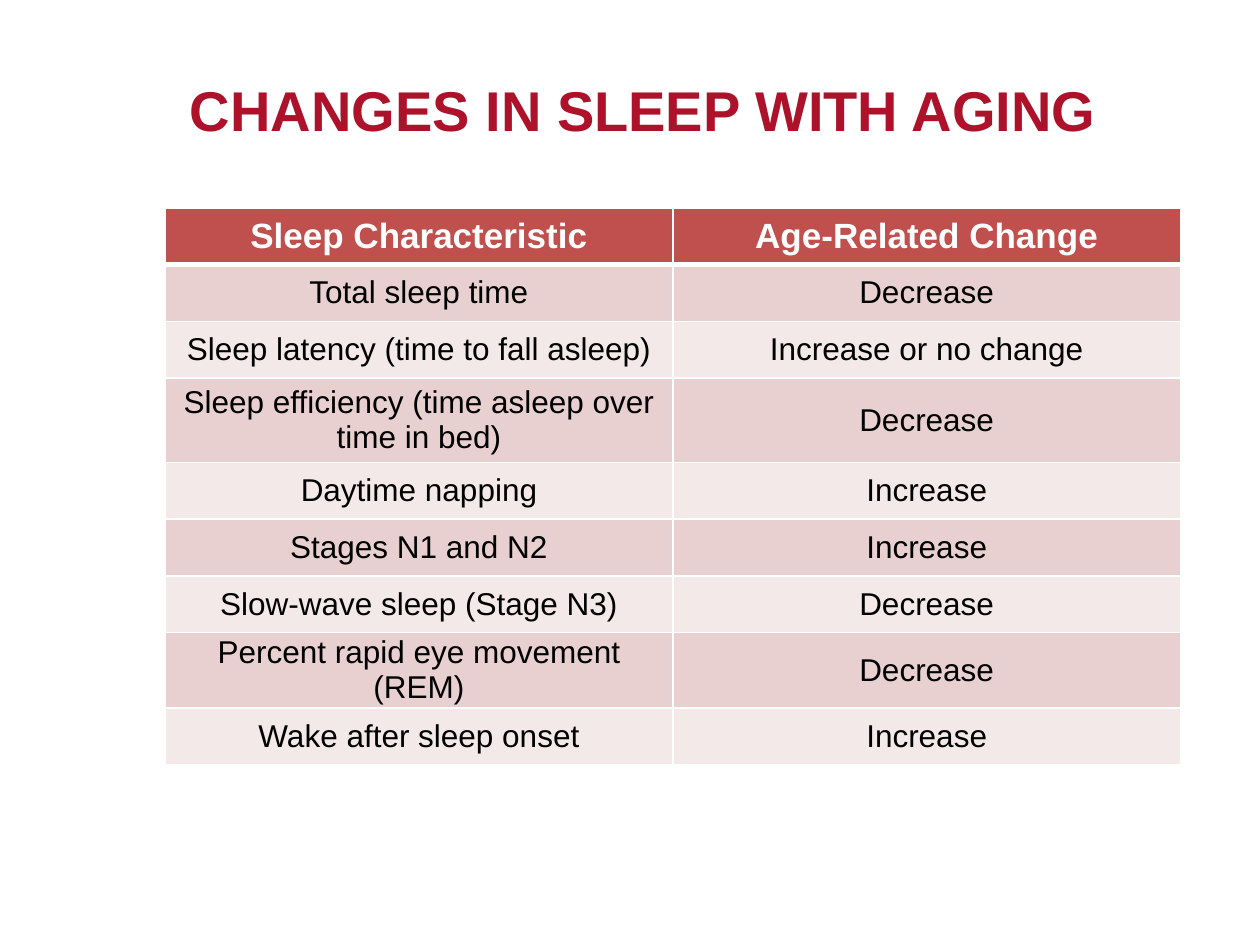
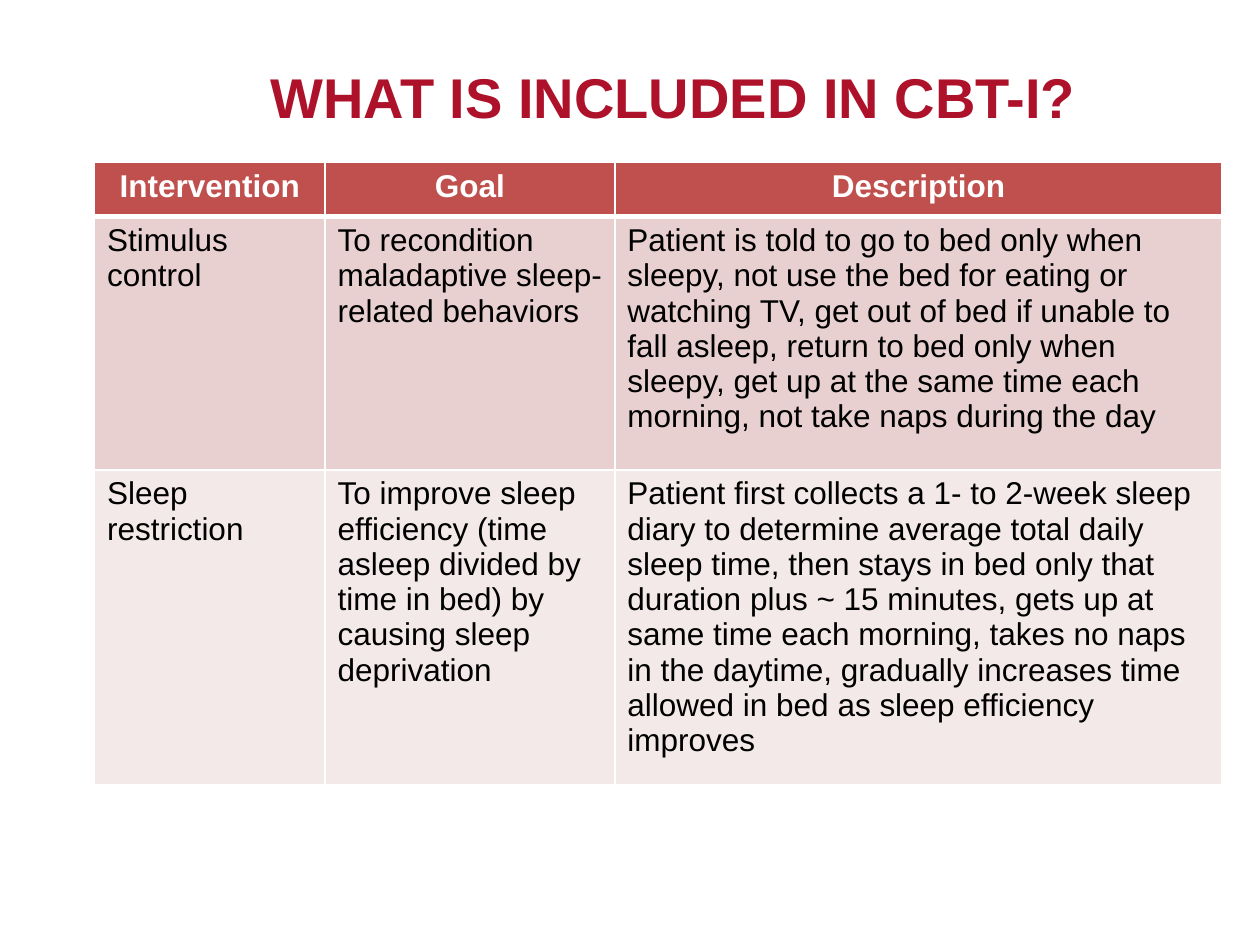
"""Build two slides on sleep, each a title above a banded table."""
from dataclasses import dataclass

from pptx import Presentation
from pptx.dml.color import RGBColor
from pptx.enum.text import MSO_ANCHOR, PP_ALIGN
from pptx.oxml.ns import qn
from pptx.util import Pt
from lxml.etree import SubElement

PX = 9144
FONT = "Arial"
COLORS = {
    "title": "AD122A",
    "head": "C0504D",
    "dark": "E8D0D0",
    "light": "F4E9E9",
    "white": "FFFFFF",
    "black": "000000",
}


@dataclass(frozen=True)
class Box:
    left: int
    top: int
    width: int
    height: int


@dataclass(frozen=True)
class Grid:
    left: int
    top: int
    cols: list[int]
    rows: list[int]
    cells: list[list[str]]
    pad: tuple[int, int]
    head_size: int
    align: PP_ALIGN
    anchor: MSO_ANCHOR


@dataclass(frozen=True)
class Page:
    title: str
    box: Box
    grid: Grid


PAGES = [
    Page(
        "CHANGES IN SLEEP WITH AGING",
        Box(141, 47, 744, 67),
        Grid(
            left=131, top=165,
            cols=[403] * 2,
            rows=[45] * 3 + [67] + [45] * 5,
            cells=[
                ["Sleep Characteristic", "Age-Related Change"],
                ["Total sleep time", "Decrease"],
                ["Sleep latency (time to fall asleep)", "Increase or no change"],
                ["Sleep efficiency (time asleep over time in bed)", "Decrease"],
                ["Daytime napping", "Increase"],
                ["Stages N1 and N2", "Increase"],
                ["Slow-wave sleep (Stage N3)", "Decrease"],
                ["Percent rapid eye movement (REM)", "Decrease"],
                ["Wake after sleep onset", "Increase"],
            ],
            pad=(7, 0), head_size=20,
            align=PP_ALIGN.CENTER, anchor=MSO_ANCHOR.MIDDLE,
        ),
    ),
    Page(
        "WHAT IS INCLUDED IN CBT-I?",
        Box(205, 42, 667, 62),
        Grid(
            left=75, top=129,
            cols=[183, 230, 482],
            rows=[43, 201, 243],
            cells=[
                ["Intervention", "Goal", "Description"],
                [
                    "Stimulus control",
                    "To recondition maladaptive sleep-related behaviors",
                    "Patient is told to go to bed only when sleepy, not use the bed "
                    "for eating or watching TV, get out of bed if unable to fall "
                    "asleep, return to bed only when sleepy, get up at the same "
                    "time each morning, not take naps during the day",
                ],
                [
                    "Sleep restriction",
                    "To improve sleep efficiency (time asleep divided by time in "
                    "bed) by causing sleep deprivation",
                    "Patient first collects a 1- to 2-week sleep diary to determine "
                    "average total daily sleep time, then stays in bed only that "
                    "duration plus ~ 15 minutes, gets up at same time each morning, "
                    "takes no naps in the daytime, gradually increases time allowed "
                    "in bed as sleep efficiency improves",
                ],
            ],
            pad=(10, 5), head_size=18,
            align=PP_ALIGN.LEFT, anchor=MSO_ANCHOR.TOP,
        ),
    ),
]


def write(frame, text: str, *, size: int = 18, color: str = "black",
          bold: bool = False, align: PP_ALIGN = PP_ALIGN.LEFT,
          space: float | None = None) -> None:
    """Put one styled paragraph in a text frame."""
    para = frame.paragraphs[0]
    para.alignment = align
    para.line_spacing = space
    run = para.add_run()
    run.text = text
    run.font.name = FONT
    run.font.size = Pt(size)
    run.font.bold = bold
    run.font.color.rgb = RGBColor.from_string(COLORS[color])


def set_pad(item, side: int, end: int) -> None:
    """Set the inner margins of a cell or text frame."""
    item.margin_left = item.margin_right = side * PX
    item.margin_top = item.margin_bottom = end * PX


def rule(cell, **widths: int) -> None:
    """Draw white cell borders, one point wide unless given by side."""
    props = cell._tc.get_or_add_tcPr()
    for side in "LRTB":
        line = SubElement(props, qn(f"a:ln{side}"), w=str(Pt(widths.get(side, 1))))
        fill = SubElement(line, qn("a:solidFill"))
        SubElement(fill, qn("a:srgbClr"), val=COLORS["white"])


def add_title(slide, text: str, box: Box) -> None:
    """Add the red slide title."""
    shape = slide.shapes.add_textbox(
        box.left * PX, box.top * PX, box.width * PX, box.height * PX)
    frame = shape.text_frame
    frame.word_wrap = True
    frame.vertical_anchor = MSO_ANCHOR.BOTTOM
    set_pad(frame, 10, 0)
    write(frame, text, size=32, color="title", bold=True, space=0.9)


def add_grid(slide, grid: Grid) -> None:
    """Add a table with a red head row and two pale bands."""
    table = slide.shapes.add_table(
        len(grid.rows), len(grid.cols), grid.left * PX, grid.top * PX,
        sum(grid.cols) * PX, sum(grid.rows) * PX).table
    table.horz_banding = False
    for col, width in zip(table.columns, grid.cols):
        col.width = width * PX
    for i, (row, height) in enumerate(zip(table.rows, grid.rows)):
        row.height = height * PX
        head = i == 0
        shade = "head" if head else "dark" if i % 2 else "light"
        for cell, text in zip(row.cells, grid.cells[i]):
            set_pad(cell, *grid.pad)
            cell.vertical_anchor = grid.anchor
            rule(cell, T=3 if i == 1 else 1, B=3 if head else 1)
            cell.fill.solid()
            cell.fill.fore_color.rgb = RGBColor.from_string(COLORS[shade])
            if head:
                write(cell.text_frame, text, size=grid.head_size,
                      color="white", bold=True, align=PP_ALIGN.CENTER)
            else:
                write(cell.text_frame, text, align=grid.align)


def main() -> None:
    """Build and save the deck."""
    deck = Presentation()
    deck.slide_width, deck.slide_height = 1000 * PX, 750 * PX
    for page in PAGES:
        slide = deck.slides.add_slide(deck.slide_layouts[6])
        add_title(slide, page.title, page.box)
        add_grid(slide, page.grid)
    deck.save("out.pptx")


if __name__ == "__main__":
    main()
